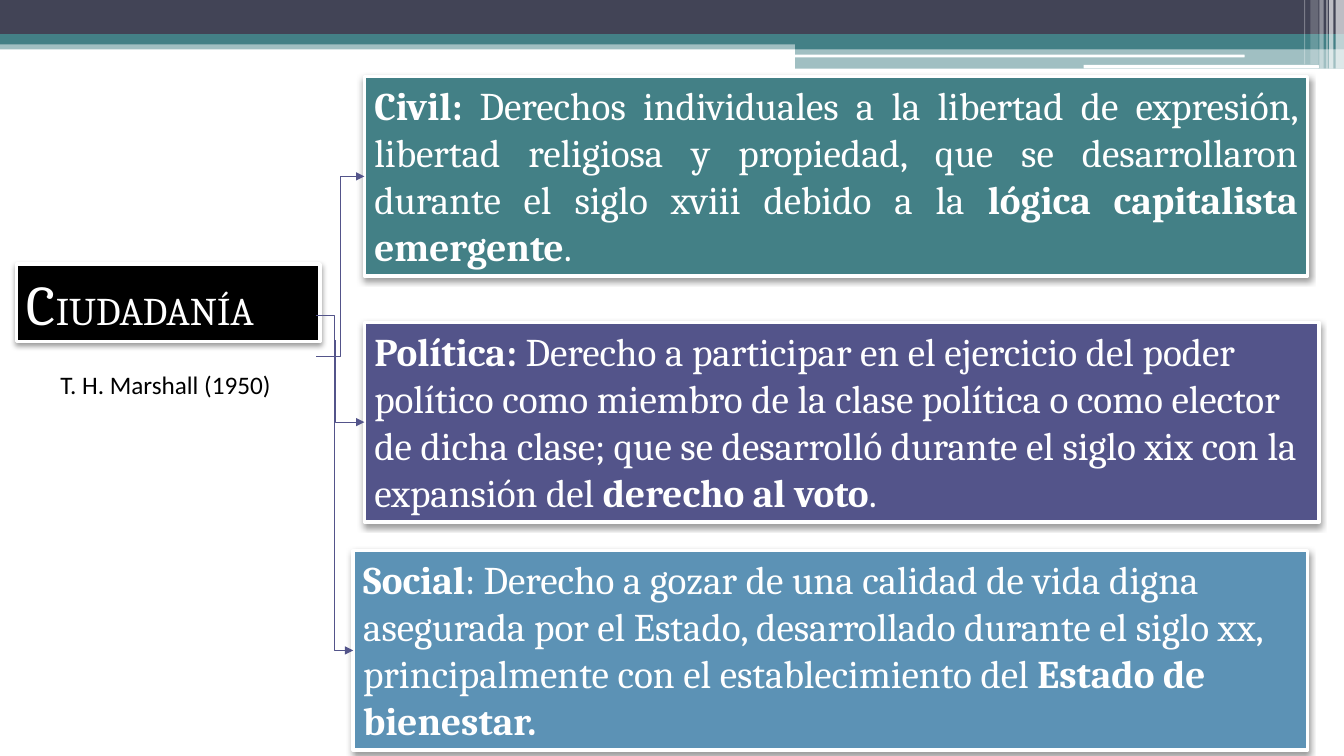
from lxml import etree
from pptx import Presentation
from pptx.dml.color import RGBColor
from pptx.enum import shapes, text
from pptx.oxml.ns import qn
from pptx.util import Pt

COLORS = {"teal": "438086", "navy": "424456", "violet": "53548A", "blue": "5C92B5",
          "white": "FFFFFF", "black": "000000"}

# left, top, width, height, colour, opacity in percent
BARS = [
    (0, 28.8, 960, 6.5, "teal", 50),
    (0, 0, 960, 24.5, "navy", 100),
    (0, 24.5, 960, 7.2, "teal", 100),
    (568, 28, 392, 7.2, "teal", 100),
    (568, 34.6, 392, 14.4, "teal", 50),
]
ROUNDED_BARS = [
    (567.5, 39, 321.5, 2, "white", 100),
    (774, 46.3, 168, 2.6, "white", 100),
]
# left, width, height, opacity of the white stripes at the top right
STRIPES = [
    (954, 6, 49, 65), (949.5, 3, 49, 65), (947.5, 0.8, 49, 60),
    (942.5, 3, 49, 40), (936, 5.8, 46, 20), (931.5, 0.8, 46, 30),
]

# Runs are (text, bold)
RIGHTS = [
    {"frame": (252.3, 393.3, 681.7, 142.6), "fill": "blue", "align": "LEFT", "runs": [
        ("Social", True),
        (": Derecho a gozar de una calidad de vida digna asegurada por el Estado, "
         "desarrollado durante el siglo xx, principalmente con el establecimiento del ", False),
        ("Estado de bienestar.", True)]},
    {"frame": (260.3, 54.7, 673.7, 142.6), "fill": "teal", "align": "JUSTIFY", "runs": [
        ("Civil: ", True),
        ("Derechos individuales a la libertad de expresión, libertad religiosa y propiedad, "
         "que se desarrollaron durante el siglo xviii debido a la ", False),
        ("lógica capitalista emergente", True), (".", False)]},
    {"frame": (260.3, 230.2, 682, 142.6), "fill": "violet", "align": "LEFT", "runs": [
        ("Política: ", True),
        ("Derecho a participar en el ejercicio del poder político como miembro de la clase "
         "política o como elector de dicha clase; que se desarrolló durante el siglo xix con "
         "la expansión del ", False),
        ("derecho al voto", True), (".", False)]},
]
TITLE_FRAME = (11.9, 188.6, 216.7, 55.4)
AUTHOR, AUTHOR_FRAME = "T. H. Marshall (1950)", (36, 260, 166.5, 29)

# Start point of the arrow to each right, and where it bends (share of its width)
ARROWS = [((226, 225.5), 0.5), ((226, 255), 0.5), ((239.5, 243), 0)]


def rgb(name):
    return RGBColor.from_string(COLORS[name])


def place(shape, frame):
    shape.left, shape.top, shape.width, shape.height = map(Pt, frame)


def add_bar(page, frame, color, opacity=100, kind=shapes.MSO_SHAPE.RECTANGLE):
    bar = page.shapes.add_shape(kind, *map(Pt, frame))
    bar.shadow.inherit = False
    bar.fill.solid()
    bar.fill.fore_color.rgb = rgb(color)
    bar.line.fill.background()
    if opacity < 100:
        paint = bar.fill._xPr.find(".//" + qn("a:srgbClr"))
        etree.SubElement(paint, qn("a:alpha"), val=str(opacity * 1000))


def style_card(card, color):
    """Solid fill, white outline and a soft shadow below."""
    card.fill.solid()
    card.fill.fore_color.rgb = rgb(color)
    card.line.color.rgb = rgb("white")
    card.line.width = Pt(2.5)
    card.shadow.inherit = False
    effects = card._element.spPr.find(qn("a:effectLst"))
    shadow = etree.SubElement(effects, qn("a:outerShdw"), blurRad=str(Pt(4.1)),
                              dist=str(Pt(2)), dir="5400000", rotWithShape="0")
    paint = etree.SubElement(shadow, qn("a:srgbClr"), val=COLORS["black"])
    etree.SubElement(paint, qn("a:alpha"), val="40000")


def prepare_text(box, align="LEFT", wrap=True, grow=True):
    frame = box.text_frame
    frame.word_wrap = wrap
    sizing = text.MSO_AUTO_SIZE
    frame.auto_size = sizing.SHAPE_TO_FIT_TEXT if grow else sizing.NONE
    frame.vertical_anchor = text.MSO_ANCHOR.TOP
    frame.margin_left = frame.margin_right = Pt(7.2)
    frame.margin_top = frame.margin_bottom = Pt(3.6)
    para = frame.paragraphs[0]
    para.alignment = text.PP_ALIGN[align]
    return para


def add_span(para, words, size=28, font="Cambria", color="white", bold=False):
    span = para.add_run()
    span.text = words
    span.font.size = Pt(size)
    span.font.name = font
    span.font.bold = bold
    span.font.color.rgb = rgb(color)


def add_arrow(page, start, end, bend):
    arrow = page.shapes.add_connector(shapes.MSO_CONNECTOR.ELBOW, *map(Pt, start + end))
    arrow.line.color.rgb = rgb("violet")
    arrow.line.width = Pt(0.75)
    properties = arrow._element.spPr
    etree.SubElement(properties.find(qn("a:ln")), qn("a:tailEnd"), type="triangle")
    etree.SubElement(properties, qn("a:effectLst"))
    guides = properties.find(qn("a:prstGeom")).get_or_add_avLst()
    etree.SubElement(guides, qn("a:gd"), name="adj1", fmla=f"val {int(bend * 100000)}")


def main():
    deck = Presentation()
    deck.slide_width, deck.slide_height = Pt(960), Pt(540)
    page = deck.slides.add_slide(deck.slide_layouts[5])

    for *frame, color, opacity in BARS:
        add_bar(page, frame, color, opacity)
    for *frame, color, opacity in ROUNDED_BARS:
        add_bar(page, frame, color, opacity, shapes.MSO_SHAPE.ROUNDED_RECTANGLE)
    for left, width, height, opacity in STRIPES:
        add_bar(page, (left, 0, width, height), "white", opacity)

    title = page.shapes.title
    place(title, TITLE_FRAME)
    style_card(title, "black")
    para = prepare_text(title, grow=False)
    add_span(para, "C", size=40)
    add_span(para, "IUDADANÍA")

    for right in RIGHTS:
        card = page.shapes.add_shape(shapes.MSO_SHAPE.RECTANGLE, *map(Pt, right["frame"]))
        style_card(card, right["fill"])
        para = prepare_text(card, right["align"])
        for words, bold in right["runs"]:
            add_span(para, words, bold=bold)

    author = page.shapes.add_textbox(*map(Pt, AUTHOR_FRAME))
    add_span(prepare_text(author, wrap=False), AUTHOR, size=18, font="Calibri", color="black")

    for right, (start, bend) in zip(RIGHTS, ARROWS):
        left, top, _, height = right["frame"]
        add_arrow(page, start, (left, top + height / 2), bend)

    deck.save("out.pptx")


if __name__ == "__main__":
    main()
